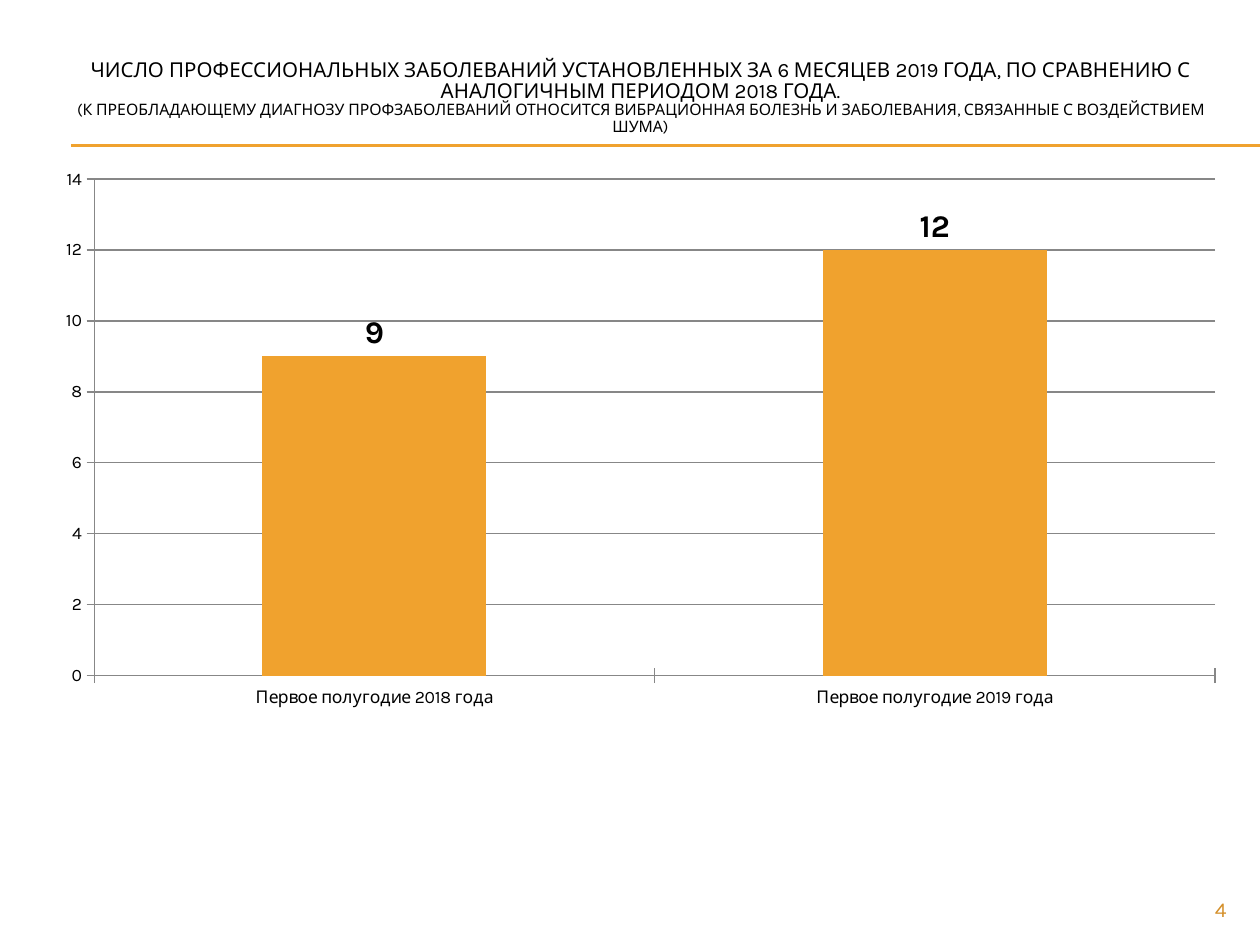
from pptx import Presentation
from pptx.chart.data import CategoryChartData
from pptx.dml.color import RGBColor
from pptx.enum.chart import XL_CHART_TYPE as ChartType, XL_LABEL_POSITION as LabelPosition, XL_TICK_MARK as Tick
from pptx.enum.shapes import MSO_CONNECTOR as Connector
from pptx.enum.text import MSO_ANCHOR as Anchor, MSO_AUTO_SIZE as AutoSize, PP_ALIGN as Align
from pptx.oxml.ns import qn
from pptx.util import Pt
from lxml import etree

PX = 914400 / 126
FONT, BLACK, ORANGE, DARK_ORANGE, GRAY = "Karla", "000000", "F0A22E", "D48F29", "878787"


def px(*lengths):
    return [round(length * PX) for length in lengths]


def color(value):
    return RGBColor.from_string(value)


def apply(target, values):
    for name, value in values.items():
        setattr(target, name, value)


class SlideBuilder:
    def __init__(self, presentation, layout_index):
        layout = presentation.slide_layouts[layout_index]
        self.slide = presentation.slides.add_slide(layout)

    def style_font(self, font, size, font_color=BLACK, bold=False):
        apply(font, {"name": FONT, "size": Pt(size), "bold": bold})
        font.color.rgb = color(font_color)

    def style_line(self, line, line_color, width=0.75):
        line.color.rgb = color(line_color)
        line.width = Pt(width)

    def rule(self, left, right, top):
        line = self.slide.shapes.add_connector(Connector.STRAIGHT, *px(left, top, right, top))
        self.style_line(line.line, ORANGE)
        etree.SubElement(line._element.spPr, qn("a:effectLst"))

    def title(self, box, parts):
        shape = self.slide.shapes.title
        apply(shape, dict(zip(("left", "top", "width", "height"), px(*box))))
        apply(shape.text_frame, {"word_wrap": True, "auto_size": AutoSize.NONE,
                                 "vertical_anchor": Anchor.MIDDLE})
        paragraph = shape.text_frame.paragraphs[0]
        apply(paragraph, {"alignment": Align.CENTER, "line_spacing": 0.86})
        for index, (text, size) in enumerate(parts):
            if index:
                paragraph.add_line_break()
            run = paragraph.add_run()
            run.text = text
            self.style_font(run.font, size)

    def text(self, box, text, size, font_color, alignment):
        frame = self.slide.shapes.add_textbox(*px(*box)).text_frame
        apply(frame, {"word_wrap": True, "vertical_anchor": Anchor.MIDDLE})
        paragraph = frame.paragraphs[0]
        paragraph.alignment = alignment
        run = paragraph.add_run()
        run.text = text
        self.style_font(run.font, size, font_color)

    def column_chart(self, box, categories, values):
        data = CategoryChartData()
        data.categories = categories
        data.add_series("Series 1", values)
        chart = self.slide.shapes.add_chart(ChartType.COLUMN_CLUSTERED, *px(*box), data).chart
        apply(chart, {"has_legend": False, "has_title": False})
        self.style_font(chart.font, 10)

        # Axes and gridlines
        for axis in (chart.category_axis, chart.value_axis):
            apply(axis, {"major_tick_mark": Tick.CROSS, "minor_tick_mark": Tick.NONE})
            self.style_line(axis.format.line, GRAY)
        apply(chart.value_axis, {"minimum_scale": 0, "maximum_scale": 14, "major_unit": 2,
                                 "has_major_gridlines": True})
        self.style_line(chart.value_axis.major_gridlines.format.line, GRAY)

        # Columns and their values
        plot = chart.plots[0]
        apply(plot, {"gap_width": 150, "vary_by_categories": False, "has_data_labels": True})
        apply(plot.data_labels, {"show_value": True, "position": LabelPosition.OUTSIDE_END})
        self.style_font(plot.data_labels.font, 18, bold=True)
        fill = plot.series[0].format.fill
        fill.solid()
        fill.fore_color.rgb = color(ORANGE)


def main():
    presentation = Presentation()
    apply(presentation, dict(zip(("slide_width", "slide_height"), px(1260, 945))))
    builder = SlideBuilder(presentation, 5)

    # Double rule below the heading
    for top in (145, 146):
        builder.rule(71, 1260, top)

    # Heading
    builder.title((42, 49, 1197, 98), [
        ("ЧИСЛО ПРОФЕССИОНАЛЬНЫХ ЗАБОЛЕВАНИЙ УСТАНОВЛЕННЫХ ЗА 6 МЕСЯЦЕВ 2019 ГОДА, "
         "ПО СРАВНЕНИЮ С АНАЛОГИЧНЫМ ПЕРИОДОМ 2018 ГОДА.", 11.7),
        ("(К ПРЕОБЛАДАЮЩЕМУ ДИАГНОЗУ ПРОФЗАБОЛЕВАНИЙ ОТНОСИТСЯ ВИБРАЦИОННАЯ БОЛЕЗНЬ "
         "И ЗАБОЛЕВАНИЯ, СВЯЗАННЫЕ С ВОЗДЕЙСТВИЕМ ШУМА)", 9),
    ])

    # Cases by half-year
    categories = [f"Первое полугодие {year} года" for year in (2018, 2019)]
    builder.column_chart((42, 158, 1197, 561), categories, (9, 12))

    # Page number
    builder.text((1134, 892, 105, 34), "4", 12, DARK_ORANGE, Align.RIGHT)

    presentation.save("out.pptx")


if __name__ == "__main__":
    main()
